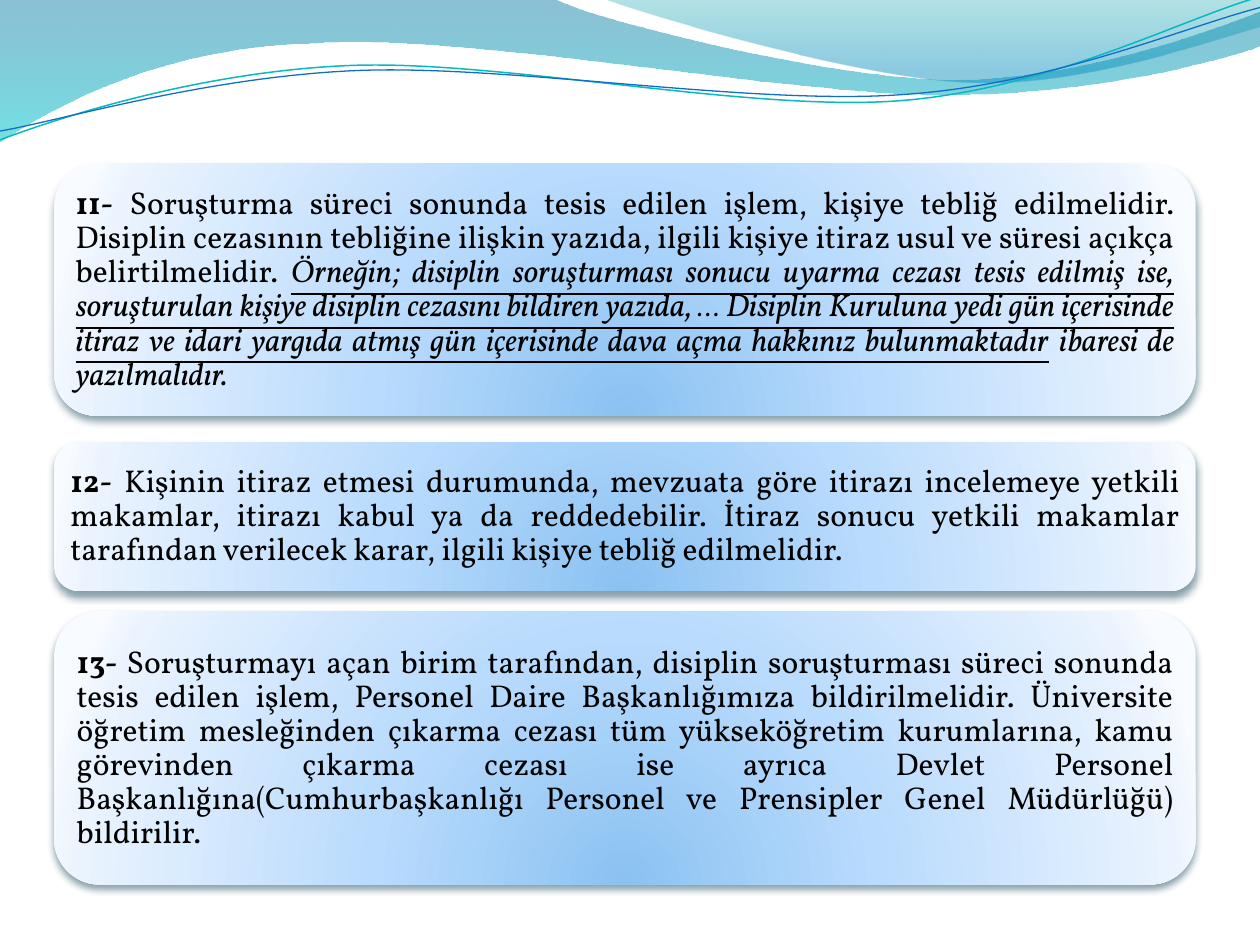
import math
from dataclasses import dataclass, field

from lxml import etree
from pptx import Presentation
from pptx.dml.color import RGBColor
from pptx.enum.shapes import MSO_SHAPE
from pptx.enum.text import MSO_ANCHOR, PP_ALIGN
from pptx.oxml.ns import qn
from pptx.util import Inches, Pt

ROUNDED = MSO_SHAPE.ROUNDED_RECTANGLE
MIDDLE = MSO_ANCHOR.MIDDLE
JUSTIFY = PP_ALIGN.JUSTIFY

BLACK = RGBColor(0x00, 0x00, 0x00)
SHADOW = RGBColor(0x00, 0x37, 0x4C)
DEEP_BLUE = RGBColor(0x00, 0x74, 0xA1)
AQUA = RGBColor(0x00, 0xC6, 0xCF)
TEAL = RGBColor(0x00, 0xA1, 0xA9)
OCEAN = RGBColor(0x00, 0x8B, 0xBF)
TEAL_LINE = RGBColor(0x0A, 0xB8, 0xBF)
BLUE_LINE = RGBColor(0x0F, 0x6F, 0xC6)
CARD_CORE = RGBColor(0x8B, 0xC2, 0xF1)
CARD_MID = RGBColor(0xB9, 0xDB, 0xFD)
CARD_PALE = RGBColor(0xEA, 0xF3, 0xFE)
CARD_EDGE = RGBColor(0xF8, 0xFB, 0xFF)

FONT = "Vollkorn"
CARD_LEFT, CARD_WIDTH = 0.43, 9.06
CORNER_INSET = 0.05
TEXT_MARGIN = 0.07
LINE_TILT = -2.7
LINE_CENTER = (4.99, 0.58)


@dataclass(frozen=True)
class Stop:
    position: int
    color: RGBColor
    opacity: int = 100


@dataclass(frozen=True)
class Wave:
    start: tuple
    segments: list
    stops: tuple = ()
    line_color: RGBColor | None = None
    line_width: float = 0
    tilt: float = 0


@dataclass(frozen=True)
class Passage:
    text: str
    style: dict = field(default_factory=dict)


@dataclass(frozen=True)
class Card:
    top: float
    height: float
    passages: list


CARD_STOPS = (Stop(0, CARD_CORE), Stop(43, CARD_MID), Stop(93, CARD_PALE), Stop(100, CARD_EDGE))
BOLD = {"bold": True}
ITALIC = {"italic": True}
EXAMPLE = {"italic": True, "underline": True}

WAVES = [
    Wave((-0.01, -0.01), [
        (4.39, -0.01),
        (4.76, 0.17, 6.64, 0.63, 7.58, 0.63),
        (8.53, 0.63, 9.58, 0.26, 10, 0.09),
        (10.01, 0.36),
        (9.83, 0.44, 8.7, 0.76, 7.46, 0.75),
        (6.22, 0.75, 3.82, 0.28, 2.57, 0.34),
        (1.29, 0.36, 0.46, 0.83, -0.01, 1.13),
    ], stops=(Stop(0, DEEP_BLUE, 45), Stop(100, AQUA, 55))),
    Wave((4.79, -0.01), [
        (5.09, 0.11, 6.82, 0.62, 7.69, 0.65),
        (8.56, 0.69, 9.61, 0.32, 10, 0.21),
        (10, 0),
    ], stops=(Stop(0, TEAL, 30), Stop(80, OCEAN, 45))),
    Wave((0, 1.11), [
        (0.48, 0.93, 1.58, 0.57, 2.77, 0.52),
        (3.95, 0.47, 5.93, 0.89, 7.13, 0.8),
        (8.33, 0.71, 9.38, 0.15, 9.98, -0.02),
    ], line_color=TEAL_LINE, line_width=0.85, tilt=LINE_TILT),
    Wave((0, 1.04), [
        (0.47, 0.96, 1.64, 0.61, 2.83, 0.56),
        (4.03, 0.51, 5.97, 0.84, 7.17, 0.75),
        (8.36, 0.67, 9.41, 0.21, 10, 0.06),
    ], line_color=BLUE_LINE, line_width=0.75, tilt=LINE_TILT),
]

CARDS = [
    Card(1.3, 2, [
        Passage("11-", BOLD),
        Passage(" Soruşturma süreci sonunda tesis edilen işlem, kişiye tebliğ edilmelidir. "
                "Disiplin cezasının tebliğine ilişkin yazıda, ilgili kişiye itiraz usul ve süresi "
                "açıkça belirtilmelidir. "),
        Passage("Örneğin; disiplin soruşturması sonucu uyarma cezası tesis edilmiş ise, "
                "soruşturulan kişiye disiplin cezasını bildiren yazıda, … Disiplin Kuruluna yedi "
                "gün içerisinde itiraz ve idari yargıda atmış gün içerisinde dava açma hakkınız "
                "bulunmaktadır", EXAMPLE),
        Passage(" ibaresi de yazılmalıdır.", ITALIC),
    ]),
    Card(3.51, 1.18, [
        Passage("12-", BOLD),
        Passage(" Kişinin itiraz etmesi durumunda, mevzuata göre itirazı incelemeye yetkili "
                "makamlar, itirazı kabul ya da reddedebilir. İtiraz sonucu yetkili makamlar "
                "tarafından verilecek karar, ilgili kişiye tebliğ edilmelidir."),
    ]),
    Card(4.85, 2.17, [
        Passage("13- ", BOLD),
        Passage("Soruşturmayı açan birim tarafından, disiplin soruşturması süreci sonunda tesis "
                "edilen işlem, Personel Daire Başkanlığımıza bildirilmelidir. Üniversite öğretim "
                "mesleğinden çıkarma cezası tüm yükseköğretim kurumlarına, kamu görevinden "
                "çıkarma cezası ise ayrıca Devlet Personel Başkanlığına(Cumhurbaşkanlığı Personel "
                "ve Prensipler Genel Müdürlüğü) bildirilir."),
    ]),
]


def add_node(parent, tag: str, **attributes):
    return etree.SubElement(parent, qn(tag), {k: str(v) for k, v in attributes.items()})


def add_color(parent, color: RGBColor, opacity: int) -> None:
    node = add_node(parent, "a:srgbClr", val=color)
    if opacity < 100:
        add_node(node, "a:alpha", val=opacity * 1000)


def fill_gradient(shape, stops: tuple, radial: bool = False) -> None:
    shape.fill.gradient()
    gradient = shape.element.spPr.find(qn("a:gradFill"))
    gradient.clear()
    stop_list = add_node(gradient, "a:gsLst")
    for stop in stops:
        add_color(add_node(stop_list, "a:gs", pos=stop.position * 1000), stop.color, stop.opacity)
    if radial:
        focus = add_node(gradient, "a:path", path="circle")
        add_node(focus, "a:fillToRect", l=50000, t=130000, r=50000, b=-30000)
    else:
        add_node(gradient, "a:lin", ang=5400000, scaled=1)


def level(point: tuple, tilt: float) -> tuple:
    angle = math.radians(-tilt)
    dx, dy = point[0] - LINE_CENTER[0], point[1] - LINE_CENTER[1]
    return (Inches(LINE_CENTER[0] + dx * math.cos(angle) - dy * math.sin(angle)),
            Inches(LINE_CENTER[1] + dx * math.sin(angle) + dy * math.cos(angle)))


def bend(ribbon, segments: list) -> None:
    steps = iter(list(ribbon.element.iter(qn("a:lnTo"))))
    for segment in segments:
        first = next(steps)
        if len(segment) == 6:
            curve = etree.Element(qn("a:cubicBezTo"))
            first.addprevious(curve)
            for step in (first, next(steps), next(steps)):
                curve.append(step[0])
                step.getparent().remove(step)


def draw_wave(slide, wave: Wave) -> None:
    points = [segment[i:i + 2] for segment in wave.segments for i in range(0, len(segment), 2)]
    builder = slide.shapes.build_freeform(*level(wave.start, wave.tilt))
    builder.add_line_segments([level(point, wave.tilt) for point in points],
                              close=bool(wave.stops))
    ribbon = builder.convert_to_shape()
    bend(ribbon, wave.segments)
    ribbon.rotation = wave.tilt
    ribbon.shadow.inherit = False
    if wave.stops:
        fill_gradient(ribbon, wave.stops)
        ribbon.line.fill.background()
    else:
        ribbon.fill.background()
        ribbon.line.color.rgb = wave.line_color
        ribbon.line.width = Pt(wave.line_width)


def draw_card(slide, card: Card) -> None:
    panel = slide.shapes.add_shape(ROUNDED, Inches(CARD_LEFT), Inches(card.top),
                                   Inches(CARD_WIDTH), Inches(card.height))
    fill_gradient(panel, CARD_STOPS, radial=True)
    panel.line.fill.background()
    panel.shadow.inherit = False
    shadow = add_node(panel.element.spPr.find(qn("a:effectLst")), "a:outerShdw",
                      blurRad=Pt(4.5), dist=Pt(3), dir=5400000, rotWithShape=0)
    add_color(shadow, SHADOW, 48)

    inset = card.height * CORNER_INSET
    body = slide.shapes.add_textbox(Inches(CARD_LEFT + inset), Inches(card.top + inset),
                                    Inches(CARD_WIDTH - 2 * inset),
                                    Inches(card.height - 2 * inset))
    frame = body.text_frame
    frame.word_wrap = True
    frame.vertical_anchor = MIDDLE
    for side in ("left", "top", "right", "bottom"):
        setattr(frame, f"margin_{side}", Inches(TEXT_MARGIN))
    paragraph = frame.paragraphs[0]
    paragraph.alignment = JUSTIFY
    paragraph.line_spacing = 0.9
    for passage in card.passages:
        run = paragraph.add_run()
        run.text = passage.text
        run.font.color.rgb = BLACK
        for name, value in ({"name": FONT, "size": Pt(18)} | passage.style).items():
            setattr(run.font, name, value)


def main() -> None:
    deck = Presentation()
    deck.slide_width, deck.slide_height = Inches(10), Inches(7.5)
    slide = deck.slides.add_slide(deck.slide_layouts[6])
    for wave in WAVES:
        draw_wave(slide, wave)
    for card in CARDS:
        draw_card(slide, card)
    deck.save("out.pptx")


if __name__ == "__main__":
    main()
